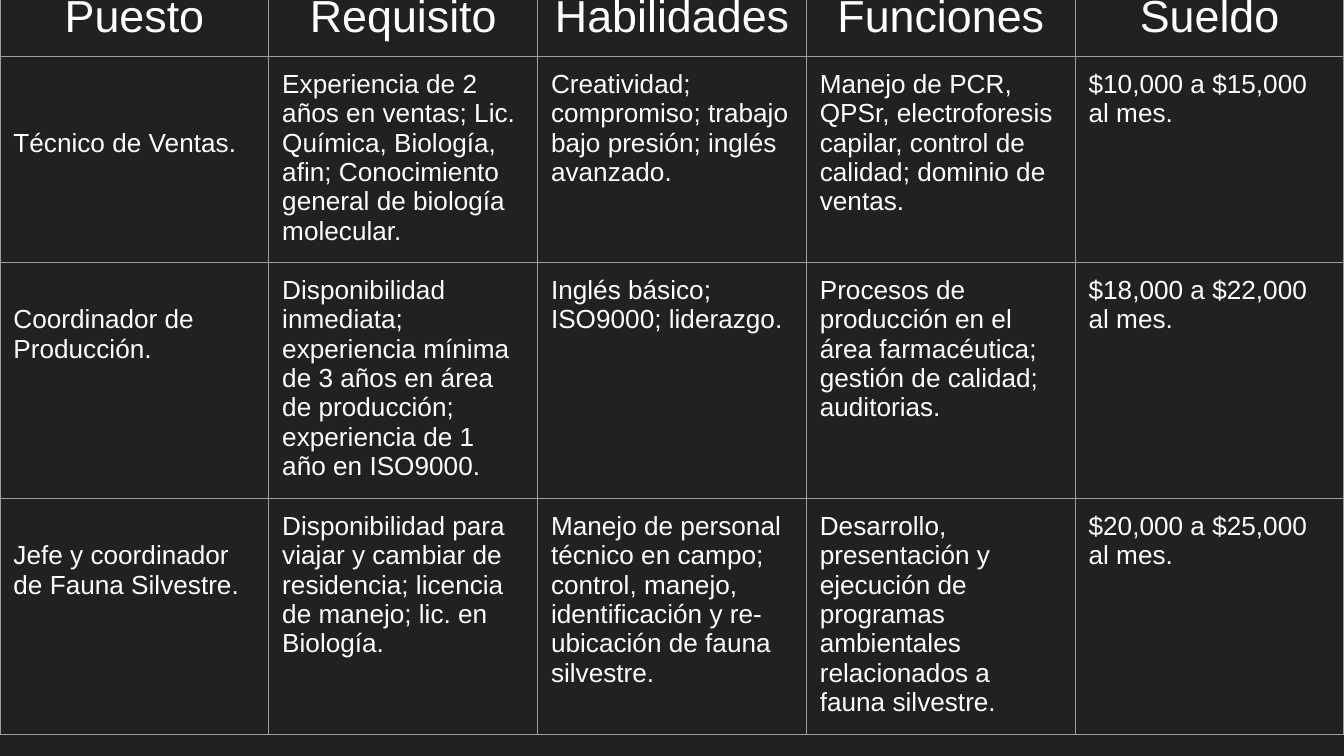
import pptx
import pptx.dml.color
import pptx.enum.text
import pptx.oxml
import pptx.oxml.ns
import pptx.util

Pt = pptx.util.Pt
RGBColor = pptx.dml.color.RGBColor
ALIGN = pptx.enum.text.PP_ALIGN

BACKGROUND = RGBColor(0x21, 0x21, 0x21)
WHITE = RGBColor(0xFF, 0xFF, 0xFF)
GRID = RGBColor(0x9E, 0x9E, 0x9E)

FONT = "Arial"
INSET = 7.2
BODY_SIZE = 14
BODY_LINE = 15.75
HEADER_SIZE = 24
COLUMN_WIDTH = 144
TABLE_TOP = -11.52
ROW_HEIGHTS = [41.6, 110.4, 126.5, 126.5]
JOB_LINES_DOWN = [2, 1, 1]

HEADERS = ["Puesto", "Requisito", "Habilidades", "Funciones", "Sueldo"]
JOBS = [
    [
        "Técnico de Ventas.",
        "Experiencia de 2 años en ventas; Lic. Química, Biología, afin; "
        "Conocimiento general de biología molecular.",
        "Creatividad; compromiso; trabajo bajo presión; inglés avanzado.",
        "Manejo de PCR, QPSr, electroforesis capilar, control de calidad; "
        "dominio de ventas.",
        "$10,000 a $15,000 al mes.",
    ],
    [
        "Coordinador de Producción.",
        "Disponibilidad inmediata; experiencia mínima de 3 años en área de "
        "producción; experiencia de 1 año en ISO9000.",
        "Inglés básico; ISO9000; liderazgo.",
        "Procesos de producción en el área farmacéutica; gestión de calidad; "
        "auditorias.",
        "$18,000 a $22,000 al mes.",
    ],
    [
        "Jefe y coordinador de Fauna Silvestre.",
        "Disponibilidad para viajar y cambiar de residencia; licencia de "
        "manejo; lic. en Biología.",
        "Manejo de personal técnico en campo; control, manejo, "
        "identificación y re-ubicación de fauna silvestre.",
        "Desarrollo, presentación y ejecución de programas ambientales "
        "relacionados a fauna silvestre.",
        "$20,000 a $25,000 al mes.",
    ],
]


def add_borders(cell):
    properties = cell._tc.get_or_add_tcPr()
    for position, side in enumerate(("lnL", "lnR", "lnT", "lnB")):
        border = pptx.oxml.parse_xml(
            f'<a:{side} {pptx.oxml.ns.nsdecls("a")} w="{Pt(0.75)}">'
            f'<a:solidFill><a:srgbClr val="{GRID}"/></a:solidFill></a:{side}>'
        )
        properties.insert(position, border)


def fill_cell(cell, text, size, alignment, lines_down=0):
    cell.text = text
    cell.margin_left = cell.margin_right = cell.margin_bottom = Pt(INSET)
    cell.margin_top = Pt(INSET + lines_down * BODY_LINE)
    cell.fill.background()
    add_borders(cell)
    para = cell.text_frame.paragraphs[0]
    para.alignment = alignment
    para.font.name = FONT
    para.font.size = Pt(size)
    para.font.bold = False
    para.font.color.rgb = WHITE


def add_job_table(page):
    frame = page.shapes.add_table(
        len(ROW_HEIGHTS), len(HEADERS), Pt(0), Pt(TABLE_TOP),
        Pt(COLUMN_WIDTH * len(HEADERS)), Pt(sum(ROW_HEIGHTS)),
    )
    table = frame.table
    table.first_row = False
    table.horz_banding = False
    for column in table.columns:
        column.width = Pt(COLUMN_WIDTH)
    for row, height in zip(table.rows, ROW_HEIGHTS):
        row.height = Pt(height)
    for column, header in enumerate(HEADERS):
        fill_cell(table.cell(0, column), header, HEADER_SIZE, ALIGN.CENTER)
    for row, (job, job_lines) in enumerate(zip(JOBS, JOB_LINES_DOWN), start=1):
        for column, text in enumerate(job):
            lines_down = job_lines if column == 0 else 0
            fill_cell(table.cell(row, column), text, BODY_SIZE, ALIGN.LEFT, lines_down)


def main():
    deck = pptx.Presentation()
    deck.slide_width = Pt(720)
    deck.slide_height = Pt(405)
    page = deck.slides.add_slide(deck.slide_layouts[6])
    page.background.fill.solid()
    page.background.fill.fore_color.rgb = BACKGROUND
    add_job_table(page)
    deck.save("out.pptx")


if __name__ == "__main__":
    main()
